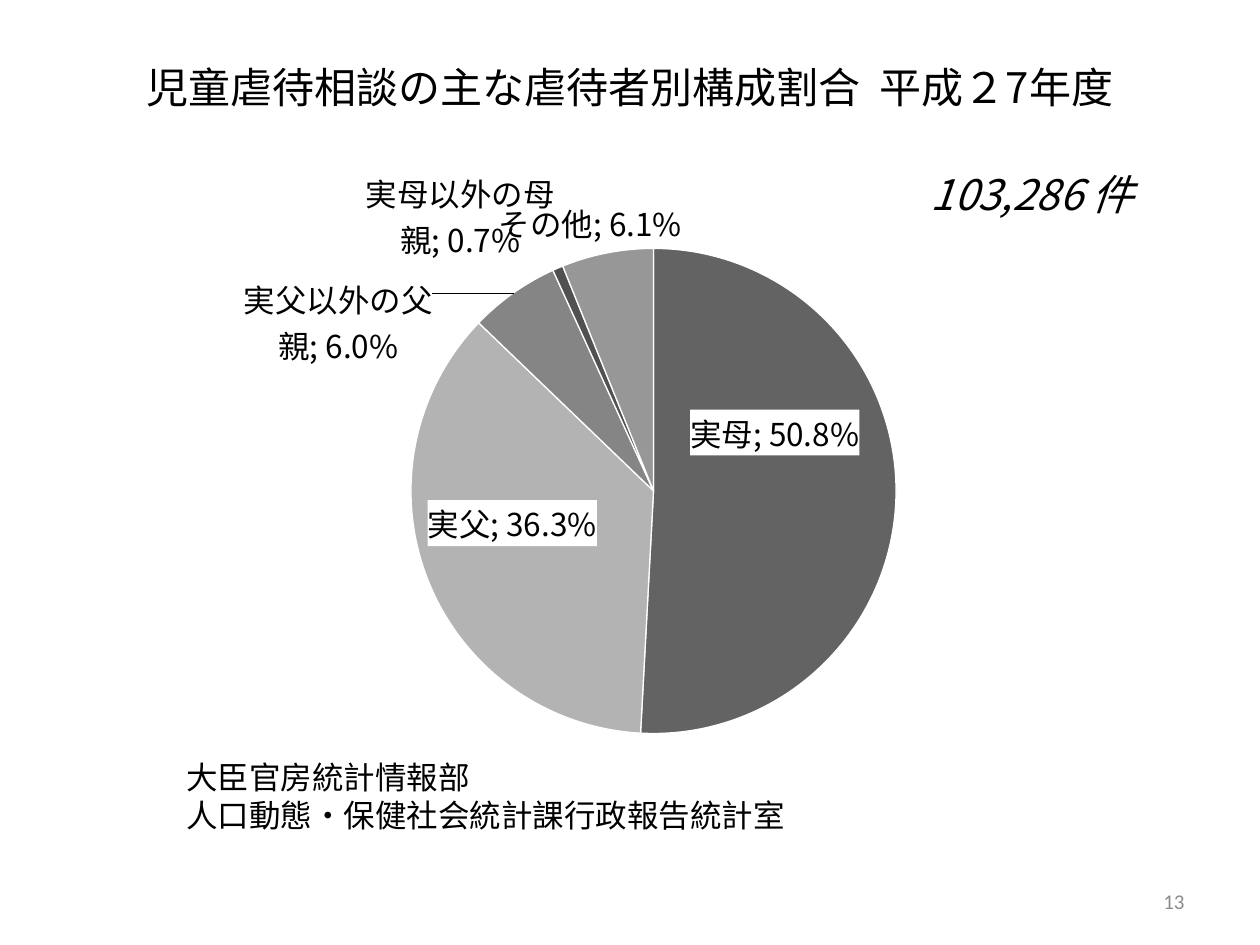
from dataclasses import dataclass

from lxml import etree
from pptx import Presentation
from pptx.chart.data import CategoryChartData
from pptx.dml.color import RGBColor
from pptx.enum.chart import XL_CHART_TYPE, XL_LABEL_POSITION
from pptx.enum.text import MSO_ANCHOR, PP_ALIGN
from pptx.oxml import parse_xml
from pptx.oxml.ns import nsdecls, qn
from pptx.util import Inches, Pt

PIE = XL_CHART_TYPE.PIE
OUTSIDE = XL_LABEL_POSITION.OUTSIDE_END
TOP, MIDDLE = MSO_ANCHOR.TOP, MSO_ANCHOR.MIDDLE
LEFT, CENTER, RIGHT = PP_ALIGN.LEFT, PP_ALIGN.CENTER, PP_ALIGN.RIGHT


@dataclass(frozen=True)
class Theme:
    font: str = "Noto Sans CJK JP"
    latin: str = "Calibri"
    ink: str = "000000"
    faint: str = "8C8C8C"
    paper: str = "FFFFFF"
    title: int = 24
    body: int = 18
    small: int = 12


THEME = Theme()

# name, share, fill, label position, label shift (x, y), label on white
SLICES = [
    ("実母", 0.508, "636363", "ctr", (0, -0.1), True),
    ("実父", 0.363, "B3B3B3", "ctr", (-0.03, -0.02), True),
    ("実父以外の父親", 0.06, "858585", "outEnd", (-0.08, 0.13), False),
    ("実母以外の母親", 0.007, "515151", "outEnd", (0, 0), False),
    ("その他", 0.061, "979797", "outEnd", (0.08, 0), False),
]


def set_font(font, size, color=THEME.ink, name=THEME.font, italic=False):
    looks = {"name": name, "size": Pt(size), "italic": italic, "bold": False}
    for key, value in looks.items():
        setattr(font, key, value)
    font.color.rgb = RGBColor.from_string(color)


def add_text(slide, box, lines, size, align=LEFT, anchor=TOP, wrap=True, **look):
    frame = slide.shapes.add_textbox(*map(Inches, box)).text_frame
    frame.word_wrap = wrap
    frame.vertical_anchor = anchor
    for i, line in enumerate(lines):
        para = frame.paragraphs[0] if i == 0 else frame.add_paragraph()
        para.alignment = align
        run = para.add_run()
        run.text = line
        set_font(run.font, size, **look)
        face = etree.SubElement(run.font._element, qn("a:ea"))
        face.set("typeface", look.get("name", THEME.font))


def make_layout(**parts):
    """Return a manual chart layout with the given elements."""
    body = "".join(f'<c:{key} val="{value}"/>' for key, value in parts.items())
    return (f"<c:layout {nsdecls('c')}><c:manualLayout>{body}"
            "</c:manualLayout></c:layout>")


def make_label(index, place, shift, plate):
    x, y = shift
    layout = make_layout(x=x, y=y) if x or y else ""
    fill = (f'<c:spPr><a:solidFill><a:srgbClr val="{THEME.paper}"/>'
            "</a:solidFill></c:spPr>") if plate else ""
    flags = {"LegendKey": 0, "Val": 1, "CatName": 1, "SerName": 0,
             "Percent": 0, "BubbleSize": 0}
    shows = "".join(f'<c:show{key} val="{on}"/>' for key, on in flags.items())
    return parse_xml(
        f'<c:dLbl {nsdecls("c", "a")}><c:idx val="{index}"/>{layout}'
        f'<c:numFmt formatCode="0.0%" sourceLinked="0"/>{fill}'
        f'<c:dLblPos val="{place}"/>{shows}'
        "<c:separator>; </c:separator></c:dLbl>")


def add_pie(slide, box):
    data = CategoryChartData(number_format="0.0%")
    data.categories = [part[0] for part in SLICES]
    data.add_series("Series 1", [part[1] for part in SLICES])
    chart = slide.shapes.add_chart(PIE, *map(Inches, box), data).chart
    chart.has_legend = chart.has_title = False
    set_font(chart.font, THEME.body, name=THEME.latin)

    plot = chart.plots[0]
    plot.vary_by_categories = True
    area = plot._element.getparent()
    for old in area.findall(qn("c:layout")):
        area.remove(old)
    area.insert(0, parse_xml(make_layout(
        layoutTarget="inner", xMode="edge", yMode="edge",
        x=0.24, y=0.18, w=0.51, h=0.79)))

    series = plot.series[0]
    labels = series.data_labels
    looks = {"show_value": True, "show_category_name": True,
             "number_format": "0.0%", "number_format_is_linked": False,
             "position": OUTSIDE}
    for key, value in looks.items():
        setattr(labels, key, value)
    set_font(labels.font, THEME.body)
    for i, (_, _, color, place, shift, plate) in enumerate(SLICES):
        shape = series.points[i].format
        shape.fill.solid()
        shape.fill.fore_color.rgb = RGBColor.from_string(color)
        shape.line.color.rgb = RGBColor.from_string(THEME.paper)
        shape.line.width = Pt(0.75)
        label = make_label(i, place, shift, plate)
        text = parse_xml(etree.tostring(labels._element.find(qn("c:txPr"))))
        label.find(qn("c:dLblPos")).addprevious(text)
        labels._element.insert(i, label)


def main():
    deck = Presentation()
    deck.slide_width, deck.slide_height = Inches(10), Inches(7.5)
    slide = deck.slides.add_slide(deck.slide_layouts[6])
    add_text(slide, (0.5, 0.3, 9, 0.78),
             ["児童虐待相談の主な虐待者別構成割合  平成２7年度"],
             THEME.title, CENTER, MIDDLE)
    add_text(slide, (1.38, 5.97, 7.62, 0.71),
             ["大臣官房統計情報部", "人口動態・保健社会統計課行政報告統計室"],
             THEME.body)
    add_pie(slide, (1.45, 1.08, 7.55, 4.9))
    add_text(slide, (7.29, 1.29, 1.92, 0.4), ["103,286 件"],
             THEME.title, wrap=False, italic=True)
    add_text(slide, (7.17, 6.95, 2.33, 0.4), ["13"], THEME.small,
             RIGHT, MIDDLE, color=THEME.faint, name=THEME.latin)
    deck.save("out.pptx")


if __name__ == "__main__":
    main()
